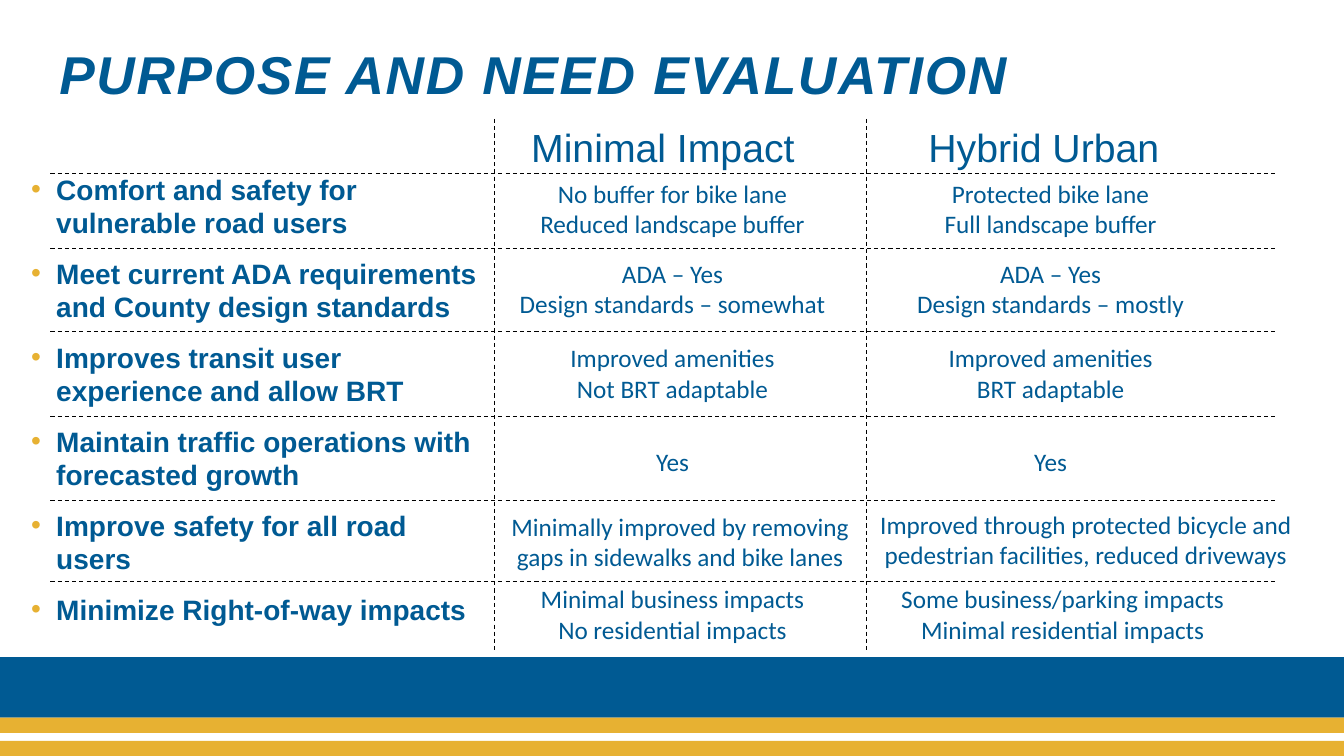
from typing import NamedTuple

from lxml import etree
from pptx import Presentation
from pptx.dml.color import RGBColor
from pptx.enum.dml import MSO_LINE
from pptx.enum.shapes import MSO_CONNECTOR, MSO_SHAPE
from pptx.enum.text import MSO_ANCHOR, PP_ALIGN
from pptx.oxml.ns import qn
from pptx.util import Pt

PX = 9144  # EMU per px, 100 px to the inch
COLORS = {"blue": "005A93", "gold": "E7B132", "black": "000000"}
LEFT, CENTER = PP_ALIGN.LEFT, PP_ALIGN.CENTER
TOP, MIDDLE = MSO_ANCHOR.TOP, MSO_ANCHOR.MIDDLE
STRAIGHT, RECT, DASH = MSO_CONNECTOR.STRAIGHT, MSO_SHAPE.RECTANGLE, MSO_LINE.DASH


class Box(NamedTuple):
    x: int
    y: int
    w: int
    h: int


class Band(NamedTuple):
    box: Box
    color: str


class Cell(NamedTuple):
    text: str
    box: Box


class Row(NamedTuple):
    y: int
    h: int
    minimal: str
    hybrid: str


BANDS = [
    Band(Box(0, 652, 1333, 60), "blue"),
    Band(Box(0, 735, 1333, 15), "gold"),
    Band(Box(0, 712, 1333, 15), "gold"),
]
HEADINGS = [
    Cell("Minimal Impact", Box(517, 116, 299, 59)),
    Cell("Hybrid Urban", Box(911, 116, 299, 59)),
]
CRITERIA = [
    "Comfort and safety for vulnerable road users",
    "Meet current ADA requirements and County design standards",
    "Improves transit user experience and allow BRT",
    "Maintain traffic operations with forecasted growth",
    "Improve safety for all road users",
    "Minimize Right-of-way impacts",
]
MINIMAL_X, HYBRID_X, ANSWER_W = 498, 873, 338
ROWS = [
    Row(172, 71, "No buffer for bike lane\vReduced landscape buffer",
        "Protected bike lane\vFull landscape buffer"),
    Row(251, 71, "ADA – Yes\vDesign standards – somewhat",
        "ADA – Yes\vDesign standards – mostly"),
    Row(335, 71, "Improved amenities\vNot BRT adaptable",
        "Improved amenities\vBRT adaptable"),
    Row(438, 40, "Yes", "Yes"),
]
WIDE_ANSWERS = [
    Cell("Minimally improved by removing gaps in sidewalks and bike lanes",
         Box(490, 502, 369, 71)),
    Cell("Improved through protected bicycle and pedestrian facilities, reduced driveways",
         Box(859, 500, 436, 71)),
    Cell("Minimal business impacts\vNo residential impacts",
         Box(MINIMAL_X, 574, ANSWER_W, 71)),
    Cell("Some business/parking impacts\vMinimal residential impacts",
         Box(HYBRID_X, 574, 362, 71)),
]
ROW_LINES = [172, 247, 329, 413, 497, 577]
COLUMN_LINES = [490, 859]


def rgb(name: str) -> RGBColor:
    return RGBColor.from_string(COLORS[name])


def emu(*lengths: int) -> list[int]:
    return [length * PX for length in lengths]


def add_bullet(p, color: str, indent: int) -> None:
    pPr = p._p.get_or_add_pPr()
    pPr.set("marL", str(indent * PX))
    pPr.set("indent", str(-indent * PX))
    bu_color = etree.SubElement(pPr, qn("a:buClr"))
    etree.SubElement(bu_color, qn("a:srgbClr"), val=COLORS[color])
    etree.SubElement(pPr, qn("a:buFont"), typeface="Arial")
    etree.SubElement(pPr, qn("a:buChar"), char="•")


def add_text(s, box: Box, *texts: str, size: int, font: str = "Arial",
             bold: bool = False, italic: bool = False, align=LEFT, anchor=TOP,
             line_spacing: float = 1.0, gap: int = 0, tracking: int = 0,
             bullet: bool = False) -> None:
    """Add one paragraph per text; gap is in points, tracking in 1/100 point."""
    tf = s.shapes.add_textbox(*emu(*box)).text_frame
    tf.word_wrap = True
    tf.vertical_anchor = anchor
    for i, text in enumerate(texts):
        p = tf.add_paragraph() if i else tf.paragraphs[0]
        if bullet:
            add_bullet(p, "gold", 25)
        p.text = text
        p.alignment = align
        p.line_spacing = line_spacing
        if i:
            p.space_before = Pt(gap)
        for r in p.runs:
            r.font.name, r.font.size = font, Pt(size)
            r.font.bold, r.font.italic = bold, italic
            r.font.color.rgb = rgb("blue")
            if tracking:
                r._r.get_or_add_rPr().set("spc", str(tracking))


def add_band(s, band: Band) -> None:
    sp = s.shapes.add_shape(RECT, *emu(*band.box))
    sp.shadow.inherit = False
    sp.fill.solid()
    sp.fill.fore_color.rgb = rgb(band.color)
    sp.line.fill.background()


def add_dashed_line(s, x1: int, y1: int, x2: int, y2: int) -> None:
    line = s.shapes.add_connector(STRAIGHT, *emu(x1, y1, x2, y2))
    line.line.color.rgb = rgb("black")
    line.line.width = Pt(0.75)
    line.line.dash_style = DASH
    etree.SubElement(line._element.spPr, qn("a:effectLst"))


def main() -> None:
    prs = Presentation()
    prs.slide_width, prs.slide_height = emu(1333, 750)
    s = prs.slides.add_slide(prs.slide_layouts[6])

    for band in BANDS:
        add_band(s, band)
    add_text(s, Box(49, 43, 1103, 75), "PURPOSE AND NEED EVALUATION", size=38,
             bold=True, italic=True, line_spacing=0.9, tracking=120)
    for heading in HEADINGS:
        add_text(s, heading.box, heading.text, size=28, anchor=MIDDLE)
    add_text(s, Box(21, 166, 470, 479), *CRITERIA, size=20, bold=True,
             gap=12, bullet=True)

    answers = [Cell(text, Box(x, row.y, ANSWER_W, row.h))
               for row in ROWS
               for x, text in ((MINIMAL_X, row.minimal), (HYBRID_X, row.hybrid))]
    for answer in answers + WIDE_ANSWERS:
        add_text(s, answer.box, answer.text, size=18, font="Calibri", align=CENTER)

    for y in ROW_LINES:
        add_dashed_line(s, 50, y, 1266, y)
    for x in COLUMN_LINES:
        add_dashed_line(s, x, 118, x, 645)
    prs.save("out.pptx")


if __name__ == "__main__":
    main()
